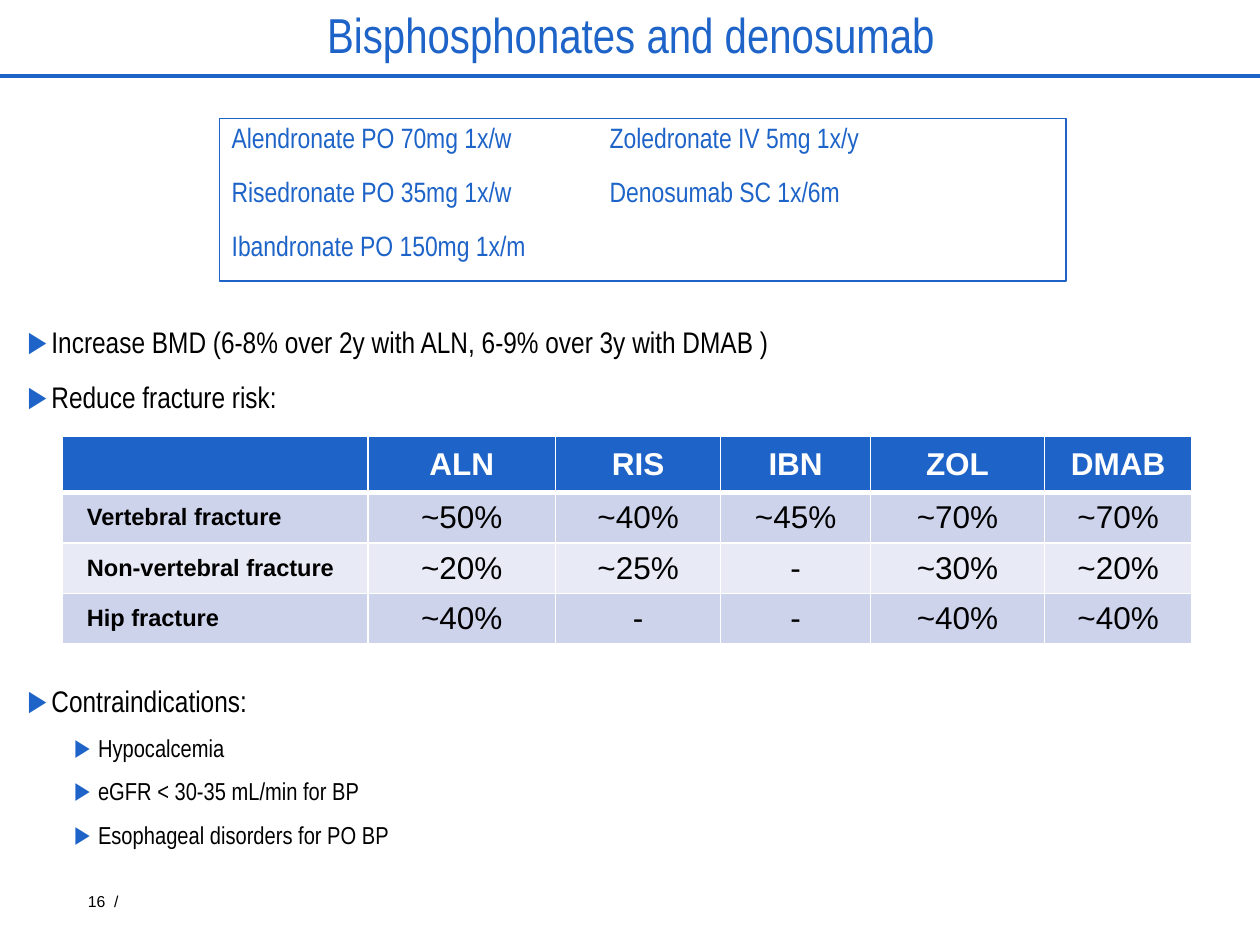
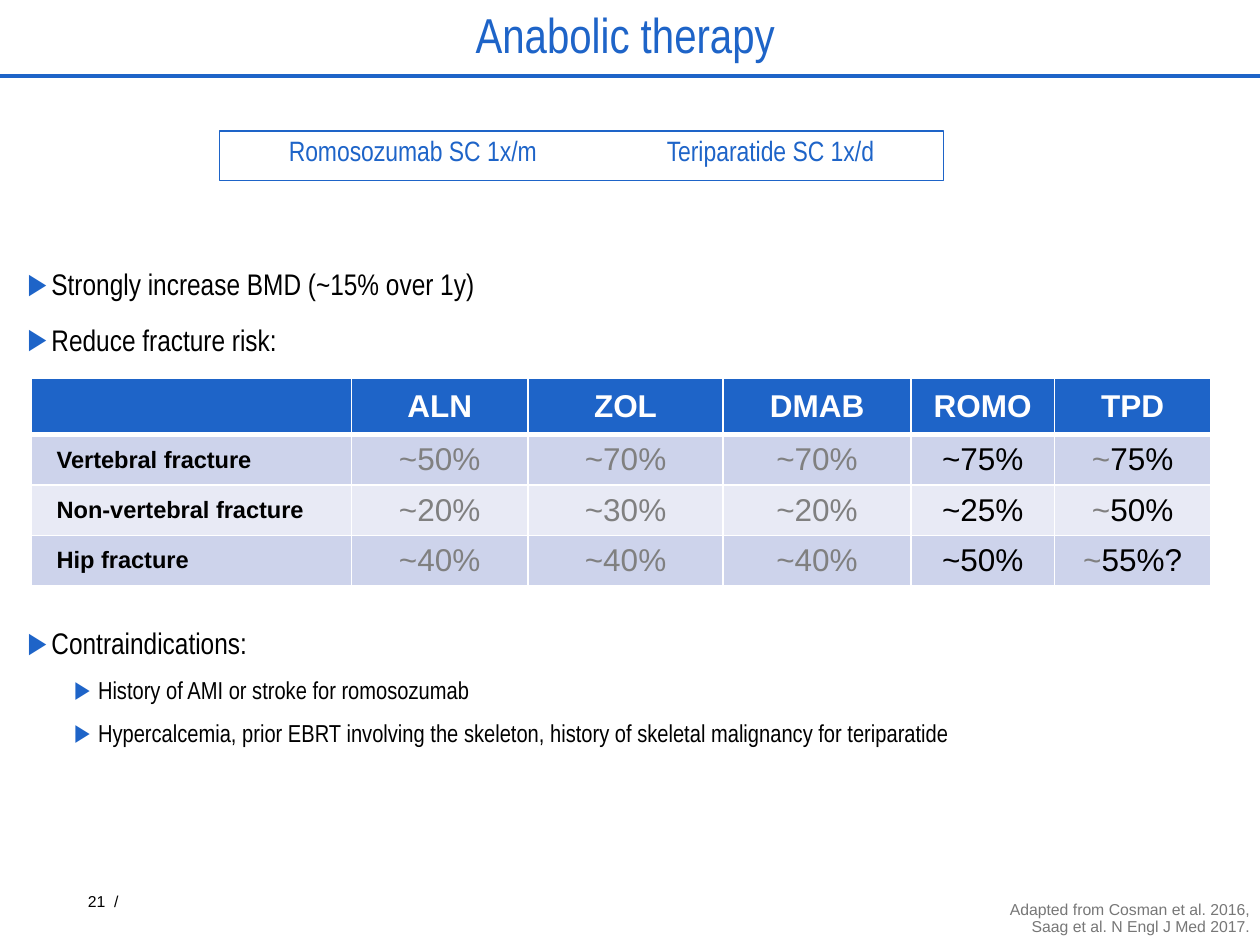
import dataclasses

import lxml.etree
import pptx
import pptx.dml.color
import pptx.enum.shapes
import pptx.enum.text
import pptx.oxml.ns
import pptx.util

Pt = pptx.util.Pt
qn = pptx.oxml.ns.qn
ALIGN = pptx.enum.text.PP_ALIGN
ANCHOR = pptx.enum.text.MSO_ANCHOR

# Grid of the slide: 100 columns by 75 rows
SLIDE_W, SLIDE_H = pptx.util.Inches(10), pptx.util.Inches(7.5)
COL, ROW = SLIDE_W / 100, SLIDE_H / 75


@dataclasses.dataclass(frozen=True)
class Theme:
    blue: str = "1E64C8"
    black: str = "000000"
    white: str = "FFFFFF"
    muted: str = "808080"
    credit: str = "777777"
    bands: tuple = ("CDD3EB", "E8EAF5")
    narrow: str = "Arial Narrow"
    sans: str = "Arial"
    title_size: float = 28
    callout_size: float = 16
    point_size: float = 17
    subpoint_size: float = 14
    cell_size: float = 18
    label_size: float = 13.5
    small_size: float = 9


T = Theme()

FRACTURES = ("Vertebral fracture", "Non-vertebral fracture", "Hip fracture")
RISK_REDUCTION = {
    "ALN": ("~50%", "~20%", "~40%"),
    "RIS": ("~40%", "~25%", "-"),
    "IBN": ("~45%", "-", "-"),
    "ZOL": ("~70%", "~30%", "~40%"),
    "DMAB": ("~70%", "~20%", "~40%"),
    "ROMO": ("~75%", "~25%", "~50%"),
    "TPD": ("~75%", "~50%", "~55%?"),
}


def rgb(color):
    return pptx.dml.color.RGBColor.from_string(color)


def place(x, y, w, h):
    """Turn grid columns and rows into slide lengths."""
    return [round(n) for n in (x * COL, y * ROW, w * COL, h * ROW)]


def apply(target, formats):
    for name, value in formats.items():
        setattr(target, name, value)


def add_run(p, text, size, color, font, bold=False):
    r = p.add_run()
    r.text = text
    apply(r.font, {"size": Pt(size), "name": font, "bold": bold})
    r.font.color.rgb = rgb(color)


def next_paragraph(tf, before=0, **formats):
    """Use the empty first paragraph, or add one with space before it."""
    p = tf.paragraphs[0]
    if p.runs:
        p = tf.add_paragraph()
        p.space_before = Pt(before)
    apply(p, formats)
    return p


def add_text_box(slide, box, **formats):
    tf = slide.shapes.add_textbox(*place(*box)).text_frame
    apply(tf, {"word_wrap": True, **formats})
    return tf


def child(parent, tag, **attributes):
    el = lxml.etree.SubElement(parent, qn(tag))
    for name, value in attributes.items():
        el.set(name, str(value))
    return el


# Title, rule and page number
def add_frame(slide, title, number):
    tf = add_text_box(slide, (0.1, 0, 99.9, 5.9), vertical_anchor=ANCHOR.MIDDLE)
    p = next_paragraph(tf, alignment=ALIGN.CENTER, line_spacing=0.9)
    add_run(p, title, T.title_size, T.blue, T.narrow)

    x, y, w, h = place(0, 6, 100, 0)
    rule = slide.shapes.add_connector(
        pptx.enum.shapes.MSO_CONNECTOR.STRAIGHT, x, y, x + w, y + h)
    rule.line.color.rgb = rgb(T.blue)
    rule.line.width = Pt(2.25)
    child(rule._element.spPr, "a:effectLst")

    tf = add_text_box(slide, (0, 70.8, 9.4, 1.5), vertical_anchor=ANCHOR.MIDDLE,
                      margin_left=0, margin_right=0, margin_top=0, margin_bottom=0)
    p = next_paragraph(tf, alignment=ALIGN.RIGHT)
    add_run(p, f"{number}  /", T.small_size, T.black, T.sans)


# Outlined box with drugs and doses, in two tabbed columns
def add_dose_box(slide, box, lines, alignment):
    sp = slide.shapes.add_shape(
        pptx.enum.shapes.MSO_SHAPE.RECTANGLE, *place(*box))
    sp.shadow.inherit = False
    sp.fill.background()
    sp.line.color.rgb = rgb(T.blue)
    sp.line.width = Pt(0.75)
    tf = sp.text_frame
    apply(tf, {"word_wrap": True, "vertical_anchor": ANCHOR.TOP})
    for line in lines:
        p = next_paragraph(tf, before=7.5, alignment=alignment,
                           line_spacing=0.9, space_after=Pt(6))
        tabs = child(p._p.get_or_add_pPr(), "a:tabLst")
        child(tabs, "a:tab", pos=round(30 * COL), algn="l")
        add_run(p, line, T.callout_size, T.blue, T.narrow)


# Bulleted points as (level, text)
def add_points(slide, box, points):
    tf = add_text_box(slide, box)
    for level, text in points:
        p = next_paragraph(tf, before=(7.5, 3.8)[level], level=level,
                           line_spacing=0.9, space_after=Pt(6))
        pPr = p._p.get_or_add_pPr()
        pPr.set("marL", str(round((1.9, 5.6)[level] * COL)))
        pPr.set("indent", str(round(-1.9 * COL)))
        child(child(pPr, "a:buClr"), "a:srgbClr", val=T.blue)
        child(pPr, "a:buFont", typeface=T.sans)
        child(pPr, "a:buChar", char="▶")
        size = (T.point_size, T.subpoint_size)[level]
        add_run(p, text, size, T.black, T.narrow)


def style_cell(cell, fill, bottom=1):
    cell.vertical_anchor = ANCHOR.MIDDLE
    tcPr = cell._tc.get_or_add_tcPr()
    for side in "LRTB":
        width = Pt(bottom if side == "B" else 1)
        ln = child(tcPr, f"a:ln{side}", w=width)
        child(child(ln, "a:solidFill"), "a:srgbClr", val=T.white)
    cell.fill.solid()
    cell.fill.fore_color.rgb = rgb(fill)


# Fracture risk table; known drugs are muted, hedged ones have a muted tilde
def add_risk_table(slide, x, y, widths, drugs, known=(), hedged=()):
    heights = [4.5] + [3.8] * len(FRACTURES)
    table = slide.shapes.add_table(
        len(heights), len(widths),
        *place(x, y, sum(widths), sum(heights))).table
    for column, width in zip(table.columns, widths):
        column.width = round(width * COL)
    for row, height in zip(table.rows, heights):
        row.height = round(height * ROW)

    for c in range(len(widths)):
        style_cell(table.cell(0, c), T.blue, bottom=3)
    for i, fracture in enumerate(FRACTURES):
        fill = T.bands[i % len(T.bands)]
        cell = table.cell(i + 1, 0)
        style_cell(cell, fill)
        cell.margin_left = round(2 * COL)
        add_run(cell.text_frame.paragraphs[0], fracture,
                T.label_size, T.black, T.sans, bold=True)
        for c, drug in enumerate(drugs, 1):
            cell = table.cell(i + 1, c)
            style_cell(cell, fill)
            p = next_paragraph(cell.text_frame, alignment=ALIGN.CENTER)
            value = RISK_REDUCTION[drug][i]
            if drug in hedged:
                add_run(p, value[0], T.cell_size, T.muted, T.sans)
                value = value[1:]
            color = T.muted if drug in known else T.black
            add_run(p, value, T.cell_size, color, T.sans)
    for c, drug in enumerate(drugs, 1):
        p = next_paragraph(table.cell(0, c).text_frame, alignment=ALIGN.CENTER)
        add_run(p, drug, T.cell_size, T.white, T.sans, bold=True)


# Source credit at the lower right
def add_credit(slide, lines):
    tf = add_text_box(slide, (69.1, 72, 30.5, 3), vertical_anchor=ANCHOR.BOTTOM,
                      margin_left=Pt(3), margin_right=Pt(3),
                      margin_top=Pt(3), margin_bottom=Pt(5))
    for line in lines:
        p = next_paragraph(tf, alignment=ALIGN.RIGHT, line_spacing=0.9)
        add_run(p, line, T.small_size, T.credit, T.sans)


# One therapy slide: frame, doses, effects, table, contraindications
def add_therapy_slide(prs, title, number, doses, effects, table, contraindications,
                      credit=()):
    slide = prs.slides.add_slide(prs.slide_layouts[6])
    add_frame(slide, title, number)
    add_dose_box(slide, **doses)
    add_points(slide, (1.2, table["y"] - 9.1, 82.4, 8),
               [(0, effects), (0, "Reduce fracture risk:")])
    add_risk_table(slide, **table)
    add_points(slide, (1.2, table["y"] + 19.4, 82.4, 14),
               [(0, "Contraindications:")] + [(1, t) for t in contraindications])
    if credit:
        add_credit(slide, credit)


def main():
    prs = pptx.Presentation()
    apply(prs, {"slide_width": SLIDE_W, "slide_height": SLIDE_H})
    add_therapy_slide(
        prs, "Bisphosphonates and denosumab", 16,
        doses={"box": (17.4, 9.4, 67.2, 12.9), "alignment": ALIGN.LEFT,
               "lines": ("Alendronate PO 70mg 1x/w\tZoledronate IV 5mg 1x/y",
                         "Risedronate PO 35mg 1x/w\tDenosumab SC 1x/6m",
                         "Ibandronate PO 150mg 1x/m")},
        effects="Increase BMD (6-8% over 2y with ALN, 6-9% over 3y with DMAB )",
        table={"x": 4.9, "y": 34.6, "widths": (24.3, 14.9, 13.1, 11.9, 13.8, 11.7),
               "drugs": ("ALN", "RIS", "IBN", "ZOL", "DMAB")},
        contraindications=("Hypocalcemia", "eGFR < 30-35 mL/min for BP",
                           "Esophageal disorders for PO BP"))
    add_therapy_slide(
        prs, "Anabolic therapy ", 21,
        doses={"box": (17.4, 10.4, 57.5, 3.9), "alignment": ALIGN.CENTER,
               "lines": ("Romosozumab SC 1x/m\tTeriparatide SC 1x/d",)},
        effects="Strongly increase BMD (~15% over 1y)",
        table={"x": 2.5, "y": 30, "widths": (25.4, 14, 15.5, 14.9, 11.4, 12.4),
               "drugs": ("ALN", "ZOL", "DMAB", "ROMO", "TPD"),
               "known": ("ALN", "ZOL", "DMAB"), "hedged": ("TPD",)},
        contraindications=(
            "History of AMI or stroke for romosozumab",
            "Hypercalcemia, prior EBRT involving the skeleton, "
            "history of skeletal malignancy for teriparatide"),
        credit=("Adapted from Cosman et al. 2016,",
                "Saag et al. N Engl J Med 2017."))
    prs.save("out.pptx")


if __name__ == "__main__":
    main()
